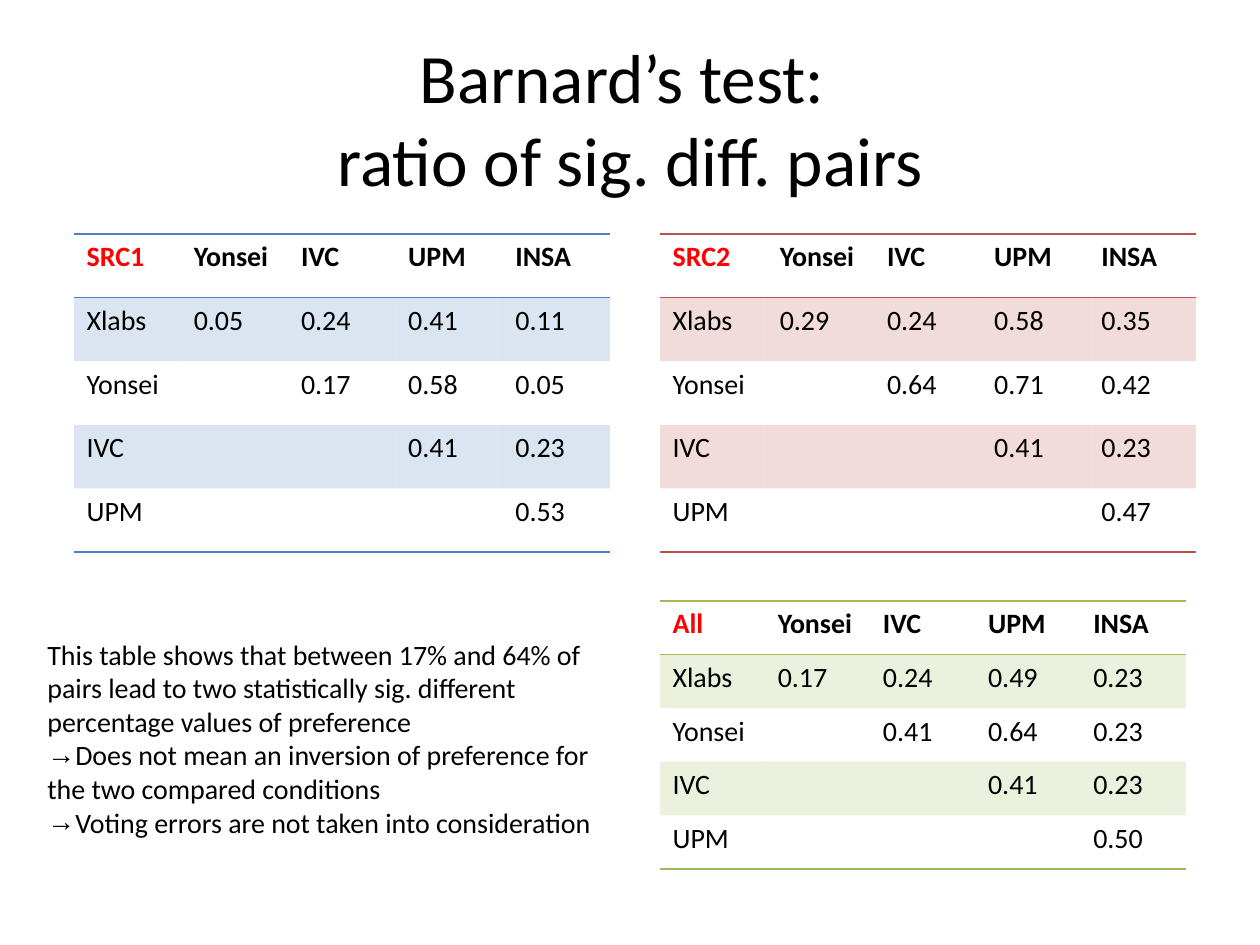
from lxml.etree import SubElement
from pptx import Presentation
from pptx.dml.color import RGBColor
from pptx.enum.text import MSO_ANCHOR, MSO_AUTO_SIZE, PP_ALIGN
from pptx.oxml.ns import qn
from pptx.util import Emu, Pt

BLACK = RGBColor(0, 0, 0)
RED = RGBColor(0xFF, 0, 0)
BLUE = RGBColor(0x4F, 0x81, 0xBD)
BRICK = RGBColor(0xC0, 0x50, 0x4D)
GREEN = RGBColor(0x9B, 0xBB, 0x59)

PLAIN = "{2D5ABB26-0587-4C30-8999-92F81FD0307C}"  # table style without grid
LABS = ["Xlabs", "Yonsei", "IVC", "UPM", "INSA"]
TABLES = [
    ("SRC1", BLUE, (74, 234, 536, 318),
     ["0.05 0.24 0.41 0.11", "0.17 0.58 0.05", "0.41 0.23", "0.53"]),
    ("SRC2", BRICK, (660, 234, 536, 318),
     ["0.29 0.24 0.58 0.35", "0.64 0.71 0.42", "0.41 0.23", "0.47"]),
    ("All", GREEN, (660, 601, 526, 268),
     ["0.17 0.24 0.49 0.23", "0.41 0.64 0.23", "0.41 0.23", "0.50"]),
]
NOTES = [
    "This table shows that between 17% and 64% of pairs lead to two "
    "statistically sig. different percentage values of preference",
    "Does not mean an inversion of preference for the two compared conditions",
    "Voting errors are not taken into consideration",
]


def px(n):
    return Emu(round(n * 914400 / 126))


def write(frame, text, size=16, color=BLACK, bold=False, align=PP_ALIGN.LEFT):
    """Fill a frame; a newline starts a paragraph, a vertical tab a line."""
    frame.text = text
    for para in frame.paragraphs:
        para.alignment = align
        for run in para.runs:
            font = run.font
            font.name, font.size, font.bold = "Calibri", Pt(size), bold
            font.color.rgb = color


def add_title(slide, box):
    title = slide.shapes.title
    title.left, title.top, title.width, title.height = map(px, box)
    frame = title.text_frame
    frame.vertical_anchor = MSO_ANCHOR.MIDDLE
    write(frame, "Barnard’s test: \vratio of sig. diff. pairs",
          size=39.6, align=PP_ALIGN.CENTER)


def add_line(cell, side, color):
    """Draw a 1 pt border; call before the cell gets its fill."""
    line = SubElement(cell._tc.get_or_add_tcPr(), qn("a:" + side), w=str(Pt(1)))
    fill = SubElement(line, qn("a:solidFill"))
    SubElement(fill, qn("a:srgbClr"), val=str(color))


def tint(cell, color):
    cell.fill.solid()
    cell.fill.fore_color.rgb = color
    tone = cell._tc.tcPr.find(qn("a:solidFill")).find(qn("a:srgbClr"))
    SubElement(tone, qn("a:alpha"), val="20000")


def add_ratios(slide, name, color, box, rows):
    """Place an upper triangle of ratios between labs."""
    size = len(LABS)
    table = slide.shapes.add_table(size, size, *map(px, box)).table
    table._tbl.tblPr.find(qn("a:tableStyleId")).text = PLAIN
    for col in table.columns:
        col.width = px(box[2] / size)
    for row in table.rows:
        row.height = px(box[3] / size)

    grid = [[name] + LABS[1:]]
    for i, row in enumerate(rows):
        grid.append([LABS[i]] + [""] * i + row.split())
    for r, row in enumerate(grid):
        for c, text in enumerate(row):
            cell = table.cell(r, c)
            write(cell.text_frame, text, bold=r == 0,
                  color=RED if r == c == 0 else BLACK)
            if r == 0:
                add_line(cell, "lnT", color)
            if r in (0, size - 1):
                add_line(cell, "lnB", color)
            if r % 2:
                tint(cell, color)
            else:
                cell.fill.background()


def add_notes(slide, box):
    frame = slide.shapes.add_textbox(*map(px, box)).text_frame
    frame.word_wrap = True
    frame.auto_size = MSO_AUTO_SIZE.SHAPE_TO_FIT_TEXT
    write(frame, "\n".join(NOTES))
    for para in frame.paragraphs[1:]:
        props = para._p.get_or_add_pPr()
        props.set("marL", "0")
        props.set("indent", "0")
        SubElement(props, qn("a:buFont"), typeface="Arial")
        SubElement(props, qn("a:buChar"), char="→")


def main():
    deck = Presentation()
    deck.slide_width, deck.slide_height = px(1260), px(945)
    slide = deck.slides.add_slide(deck.slide_layouts[5])
    add_title(slide, (63, 38, 1134, 158))
    for item in TABLES:
        add_ratios(slide, *item)
    add_notes(slide, (35, 631, 586, 217))
    deck.save("out.pptx")


if __name__ == "__main__":
    main()
